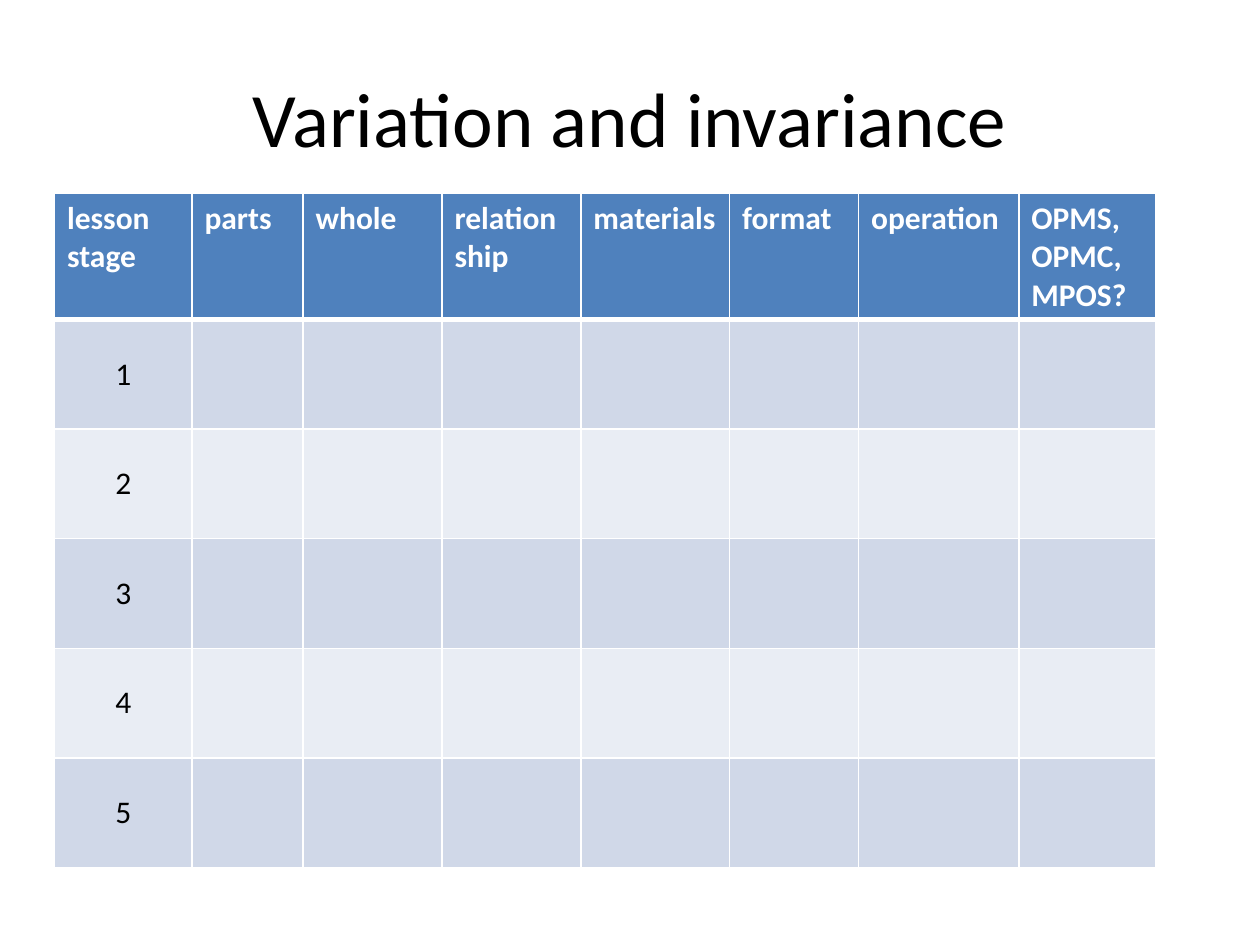
from dataclasses import dataclass

from lxml.etree import SubElement
from pptx import Presentation
from pptx.dml.color import RGBColor
from pptx.enum.text import MSO_ANCHOR, PP_ALIGN
from pptx.oxml.ns import qn
from pptx.util import Cm, Pt


@dataclass(frozen=True)
class Theme:
    font: str = "Calibri"
    title_size: int = 44
    table_size: int = 18
    text: str = "000000"
    light: str = "FFFFFF"
    header: str = "4F81BD"
    bands: tuple = ("D0D8E8", "E9EDF4")
    rule: float = 1
    header_rule: float = 3


def write(tf, text, *, font, size, color, bold=False, align=PP_ALIGN.LEFT):
    p = tf.paragraphs[0]
    p.alignment = align
    r = p.add_run()
    r.text = text
    r.font.name = font
    r.font.size = Pt(size)
    r.font.bold = bold
    r.font.color.rgb = RGBColor.from_string(color)


def set_borders(cell, color, **widths):
    tc_pr = cell._tc.get_or_add_tcPr()
    for side in "LRTB":
        ln = SubElement(tc_pr, qn(f"a:ln{side}"), w=str(Pt(widths[side])))
        fill = SubElement(ln, qn("a:solidFill"))
        SubElement(fill, qn("a:srgbClr"), val=color)


class SlideBuilder:
    def __init__(self, slide, theme):
        self.slide = slide
        self.theme = theme

    def title(self, text, left, top, width, height):
        th = self.theme
        sp = self.slide.shapes.add_textbox(Cm(left), Cm(top), Cm(width), Cm(height))
        tf = sp.text_frame
        tf.word_wrap = True
        tf.vertical_anchor = MSO_ANCHOR.MIDDLE
        write(tf, text, font=th.font, size=th.title_size, color=th.text,
              align=PP_ALIGN.CENTER)

    def table(self, headers, stages, left, top, widths, header_height, row_height):
        heights = [header_height] + [row_height] * len(stages)
        table = self.slide.shapes.add_table(
            len(heights), len(widths), Cm(left), Cm(top),
            Cm(sum(widths)), Cm(sum(heights))).table
        for col, width in zip(table.columns, widths):
            col.width = Cm(width)
        for row, height in zip(table.rows, heights):
            row.height = Cm(height)
        for i, text in enumerate(headers):
            self.header_cell(table.cell(0, i), text)
        for i, stage in enumerate(stages):
            for j in range(len(headers)):
                self.body_cell(table.cell(i + 1, j), i, stage if j == 0 else "")

    def header_cell(self, cell, text):
        th = self.theme
        self.paint(cell, th.header, T=th.rule, B=th.header_rule)
        write(cell.text_frame, text, font=th.font, size=th.table_size,
              color=th.light, bold=True)

    def body_cell(self, cell, row, text):
        th = self.theme
        self.paint(cell, th.bands[row % 2],
                   T=th.rule if row else th.header_rule, B=th.rule)
        if text:
            cell.vertical_anchor = MSO_ANCHOR.MIDDLE
            write(cell.text_frame, text, font=th.font, size=th.table_size,
                  color=th.text, align=PP_ALIGN.CENTER)

    def paint(self, cell, fill, **widths):
        th = self.theme
        set_borders(cell, th.light, L=th.rule, R=th.rule, **widths)
        cell.fill.solid()
        cell.fill.fore_color.rgb = RGBColor.from_string(fill)


def main():
    prs = Presentation()
    prs.slide_width, prs.slide_height = Cm(25.4), Cm(19.05)
    s = SlideBuilder(prs.slides.add_slide(prs.slide_layouts[6]), Theme())
    s.title("Variation and invariance", 1.27, 0.76, 22.86, 3.18)
    s.table(
        ["lesson stage", "parts", "whole", "relationship", "materials",
         "format", "operation", "OPMS, OPMC, MPOS?"],
        [str(n) for n in range(1, 6)],
        left=1.1, top=3.89,
        widths=[2.77, 2.24, 2.8, 2.8, 3, 2.6, 3.23, 2.77],
        header_height=2.55, row_height=2.21)
    prs.save("out.pptx")


if __name__ == "__main__":
    main()
